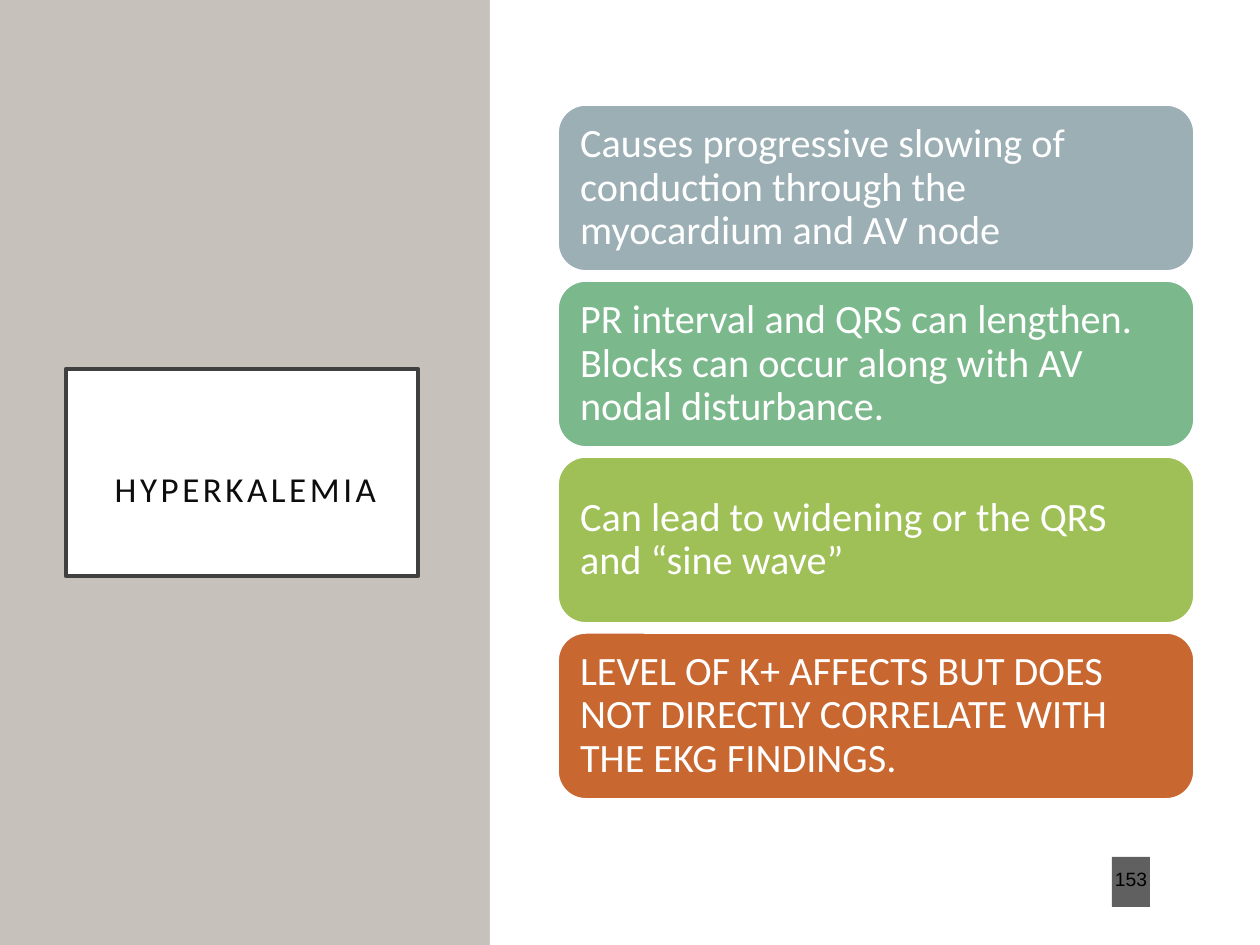
import pptx
import pptx.dml.color
import pptx.enum.shapes
import pptx.enum.text
import pptx.oxml.ns
import pptx.util
from lxml import etree

RGBColor = pptx.dml.color.RGBColor
Shapes = pptx.enum.shapes.MSO_SHAPE
Align = pptx.enum.text.PP_ALIGN

EMU_PER_PX = 914400 / 126
SLIDE_WIDTH, SLIDE_HEIGHT = 1260, 945
PANEL_WIDTH = 490
CARD_LEFT, CARD_TOP, CARD_WIDTH, CARD_HEIGHT, CARD_GAP = 558, 105, 636, 166, 10

WHITE = RGBColor(0xFF, 0xFF, 0xFF)
BLACK = RGBColor(0x00, 0x00, 0x00)
TAUPE = RGBColor(0xC6, 0xC1, 0xBA)
FRAME = RGBColor(0x40, 0x40, 0x40)
TITLE_INK = RGBColor(0x0D, 0x0D, 0x0D)
BADGE = RGBColor(0x1D, 0x1D, 0x1D)

CARDS = [
    (RGBColor(0x9B, 0xAF, 0xB5),
     "Causes progressive slowing of conduction through the myocardium and AV node"),
    (RGBColor(0x7B, 0xB8, 0x8C),
     "PR interval and QRS can lengthen. Blocks can occur along with AV nodal disturbance."),
    (RGBColor(0x9F, 0xC0, 0x57),
     "Can lead to widening or the QRS and “sine wave”"),
    (RGBColor(0xC9, 0x67, 0x31),
     "LEVEL OF K+ AFFECTS BUT DOES NOT DIRECTLY CORRELATE WITH THE EKG FINDINGS."),
]


def px(length):
    return pptx.util.Emu(round(length * EMU_PER_PX))


def set_style(shape, fill, line=None, line_width=1):
    shape.fill.solid()
    shape.fill.fore_color.rgb = fill
    if line is None:
        shape.line.fill.background()
    else:
        shape.line.color.rgb = line
        shape.line.width = pptx.util.Pt(line_width)


def add_block(slide, kind, box, fill, line=None):
    shape = slide.shapes.add_shape(kind, *map(px, box))
    shape.shadow.inherit = False
    set_style(shape, fill, line)
    return shape


def set_text(shape, text, *, size, color, font="Calibri", align=Align.LEFT,
             margins=(0, 0, 0, 0), line_spacing=0.9, tracking=None):
    """Write one paragraph; margins are left, top, right, bottom in px."""
    frame = shape.text_frame
    frame.word_wrap = True
    frame.auto_size = pptx.enum.text.MSO_AUTO_SIZE.NONE
    frame.vertical_anchor = pptx.enum.text.MSO_ANCHOR.MIDDLE
    (frame.margin_left, frame.margin_top,
     frame.margin_right, frame.margin_bottom) = map(px, margins)
    paragraph = frame.paragraphs[0]
    paragraph.alignment = align
    paragraph.line_spacing = line_spacing
    run = paragraph.add_run()
    run.text = text
    run.font.name = font
    run.font.size = pptx.util.Pt(size)
    run.font.color.rgb = color
    if tracking is not None:
        run.font._element.set("spc", str(tracking * 100))


def set_opacity(shape, percent):
    color = shape.element.spPr.find(".//" + pptx.oxml.ns.qn("a:srgbClr"))
    etree.SubElement(color, pptx.oxml.ns.qn("a:alpha"), val=str(percent * 1000))


def add_title(slide, text):
    side_panel = add_block(slide, Shapes.RECTANGLE,
                           (0, 0, PANEL_WIDTH, SLIDE_HEIGHT), TAUPE)
    title = slide.shapes.title
    title.element.addprevious(side_panel.element)
    title.left, title.top, title.width, title.height = map(px, (66, 369, 352, 207))
    set_style(title, WHITE, FRAME, 2.5)
    set_text(title, text, size=20, color=TITLE_INK, align=Align.CENTER,
             margins=(25, 63, 18, 25), tracking=2)


def add_cards(slide):
    for row, (fill, text) in enumerate(CARDS):
        top = CARD_TOP + row * (CARD_HEIGHT + CARD_GAP)
        card = add_block(slide, Shapes.ROUNDED_RECTANGLE,
                         (CARD_LEFT, top, CARD_WIDTH, CARD_HEIGHT), fill, WHITE)
        set_text(card, text, size=23, color=WHITE, margins=(14, 14, 14, 14))


def add_page_number(slide, number):
    badge = add_block(slide, Shapes.RECTANGLE, (1112, 857, 38, 50), BADGE)
    set_opacity(badge, 70)
    set_text(badge, number, size=11, color=BLACK, font="Arial",
             align=Align.CENTER, margins=(2, 6, 2, 6), line_spacing=0.7)


def main():
    presentation = pptx.Presentation()
    presentation.slide_width = px(SLIDE_WIDTH)
    presentation.slide_height = px(SLIDE_HEIGHT)
    slide = presentation.slides.add_slide(presentation.slide_layouts[5])
    add_title(slide, "HYPERKALEMIA")
    add_block(slide, Shapes.RECTANGLE,
              (PANEL_WIDTH, 0, SLIDE_WIDTH - PANEL_WIDTH, SLIDE_HEIGHT), WHITE)
    add_page_number(slide, "153")
    add_cards(slide)
    presentation.save("out.pptx")


if __name__ == "__main__":
    main()
